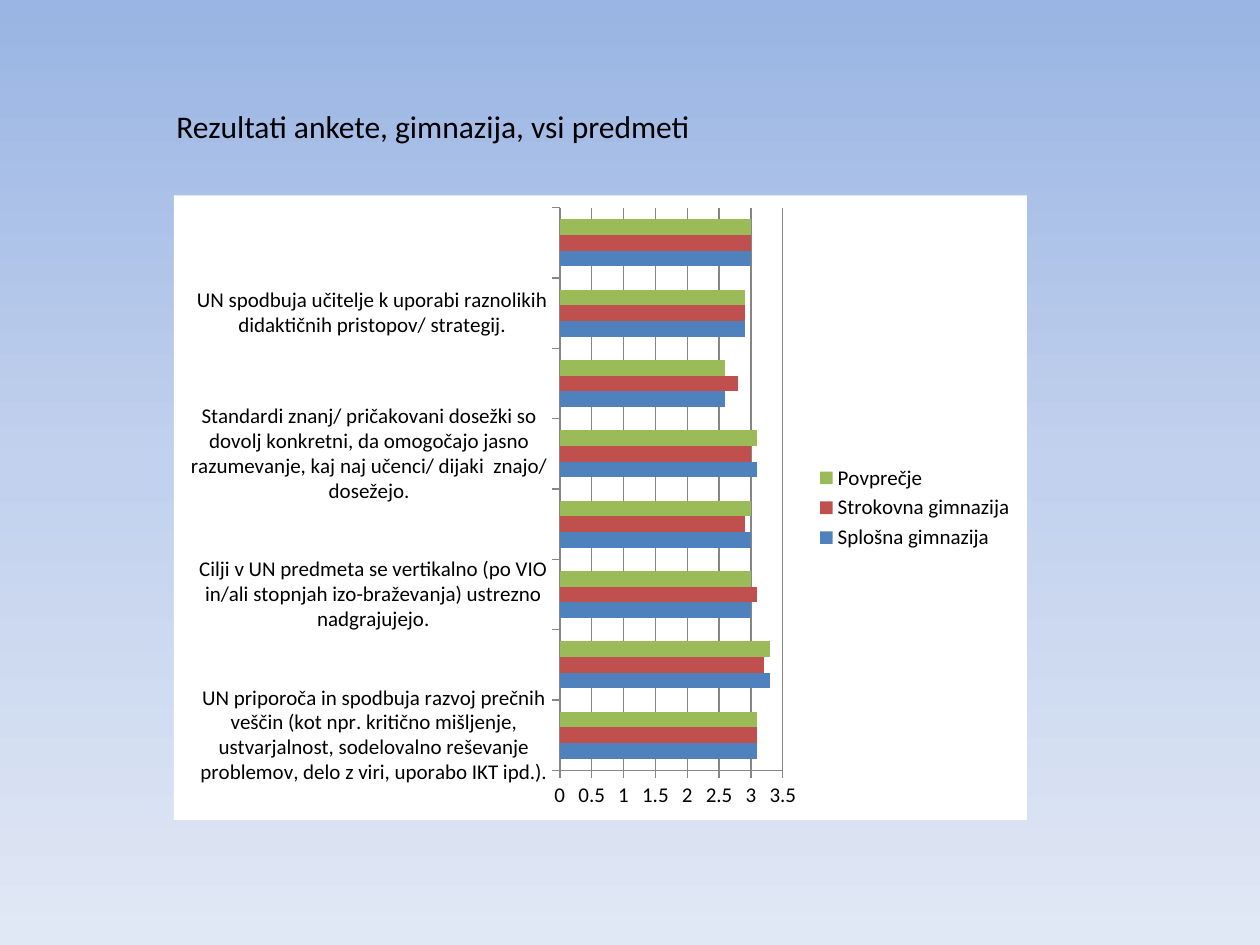
from copy import deepcopy

from pptx import Presentation
from pptx import util as u
from pptx.chart import data as chart_data
from pptx.dml.color import RGBColor
from pptx.enum import chart as charts, text
from pptx.oxml import parse_xml
from pptx.oxml.ns import nsdecls, qn

Inches, Pt = u.Inches, u.Pt
FONT = "Calibri"
COLOURS = {
    "sky_top": "9AB5E4", "sky_middle": "C2D1ED", "sky_bottom": "E1E8F5",
    "text": "000000", "paper": "FFFFFF", "line": "868686",
    "general": "4F81BD", "vocational": "C0504D", "average": "9BBB59",
}
# From the bottom up; each labelled group of bars is followed by an unlabelled one
STATEMENTS = [
    "UN priporoča in spodbuja razvoj prečnih veščin (kot npr. kritično mišljenje, "
    "ustvarjalnost, sodelovalno reševanje problemov, delo z viri, uporabo IKT ipd.).",
    "Cilji v UN predmeta se vertikalno (po VIO in/ali stopnjah izo-braževanja) "
    "ustrezno nadgrajujejo.",
    "Standardi znanj/ pričakovani dosežki so dovolj konkretni, da omogočajo jasno "
    "razumevanje, kaj naj učenci/ dijaki  znajo/ dosežejo.",
    "UN spodbuja učitelje k uporabi raznolikih didaktičnih pristopov/ strategij.",
]
SERIES = [
    ("Splošna gimnazija", "general", [3.1, 3.3, 3, 3, 3.1, 2.6, 2.9, 3]),
    ("Strokovna gimnazija", "vocational", [3.1, 3.2, 3.1, 2.9, 3, 2.8, 2.9, 3]),
    ("Povprečje", "average", [3.1, 3.3, 3, 3, 3.1, 2.6, 2.9, 3]),
]


def colour(name):
    return RGBColor.from_string(COLOURS[name])


def paint_background(page):
    fill = page.background.fill
    fill.gradient()
    fill.gradient_angle = 270
    # The default gradient has two stops; add one for the middle
    stop_list = page._element.find(".//" + qn("a:gsLst"))
    stop_list.insert(1, deepcopy(stop_list[0]))
    names = ("sky_top", "sky_middle", "sky_bottom")
    for stop, name, position in zip(fill.gradient_stops, names, (0, 0.5, 1)):
        stop.color.rgb = colour(name)
        stop.position = position


def add_title(page, box):
    title = page.shapes.title
    title.left, title.top, title.width, title.height = box
    frame = title.text_frame
    frame.text = "Rezultati ankete, gimnazija, vsi predmeti"
    frame.word_wrap = False
    frame.auto_size = text.MSO_AUTO_SIZE.SHAPE_TO_FIT_TEXT
    frame.vertical_anchor = text.MSO_ANCHOR.TOP
    para = frame.paragraphs[0]
    para.alignment = text.PP_ALIGN.LEFT
    para.font.name, para.font.size = FONT, Pt(18)
    para.font.color.rgb = colour("text")


def add_survey_chart(page, box):
    data = chart_data.CategoryChartData(number_format="General")
    for statement in STATEMENTS:
        data.add_category(statement)
        data.add_category("")
    for name, _, values in SERIES:
        data.add_series(name, values)
    chart = page.shapes.add_chart(charts.XL_CHART_TYPE.BAR_CLUSTERED, *box, data).chart
    chart.has_title = False
    chart.font.name, chart.font.size = FONT, Pt(12)
    chart.font.color.rgb = colour("text")

    # Bars
    plot = chart.plots[0]
    plot.gap_width, plot.overlap = 150, 0
    plot.vary_by_categories = False
    for series, (_, name, _) in zip(plot.series, SERIES):
        series.format.fill.solid()
        series.format.fill.fore_color.rgb = colour(name)

    # Axes: the labels have the room of two groups each
    scale = chart.value_axis
    scale.minimum_scale, scale.maximum_scale, scale.major_unit = 0, 3.5, 0.5
    scale.has_major_gridlines = True
    for axis in (chart.category_axis, scale):
        axis.major_tick_mark = charts.XL_TICK_MARK.OUTSIDE
    for part in (chart.category_axis, scale, scale.major_gridlines):
        part.format.line.color.rgb = colour("line")
        part.format.line.width = Pt(0.75)
    skip = parse_xml(f'<c:tickLblSkip {nsdecls("c")} val="2"/>')
    chart.category_axis._element.find(qn("c:noMultiLvlLbl")).addprevious(skip)

    # Legend
    chart.has_legend = True
    chart.legend.position = charts.XL_LEGEND_POSITION.RIGHT
    chart.legend.include_in_layout = False

    # White chart area without an outline
    area = parse_xml(
        f'<c:spPr {nsdecls("c", "a")}><a:solidFill><a:srgbClr val="{COLOURS["paper"]}"/>'
        "</a:solidFill><a:ln><a:noFill/></a:ln></c:spPr>")
    chart._chartSpace.find(qn("c:txPr")).addprevious(area)


def main():
    deck = Presentation()
    deck.slide_width, deck.slide_height = Inches(10), Inches(7.5)
    page = deck.slides.add_slide(deck.slide_layouts[5])
    paint_background(page)
    add_survey_chart(page, (Inches(1.38), Inches(1.55), Inches(6.77), Inches(4.96)))
    add_title(page, (Inches(1.3), Inches(0.8), Inches(4.33), Inches(0.4)))
    deck.save("out.pptx")


if __name__ == "__main__":
    main()
